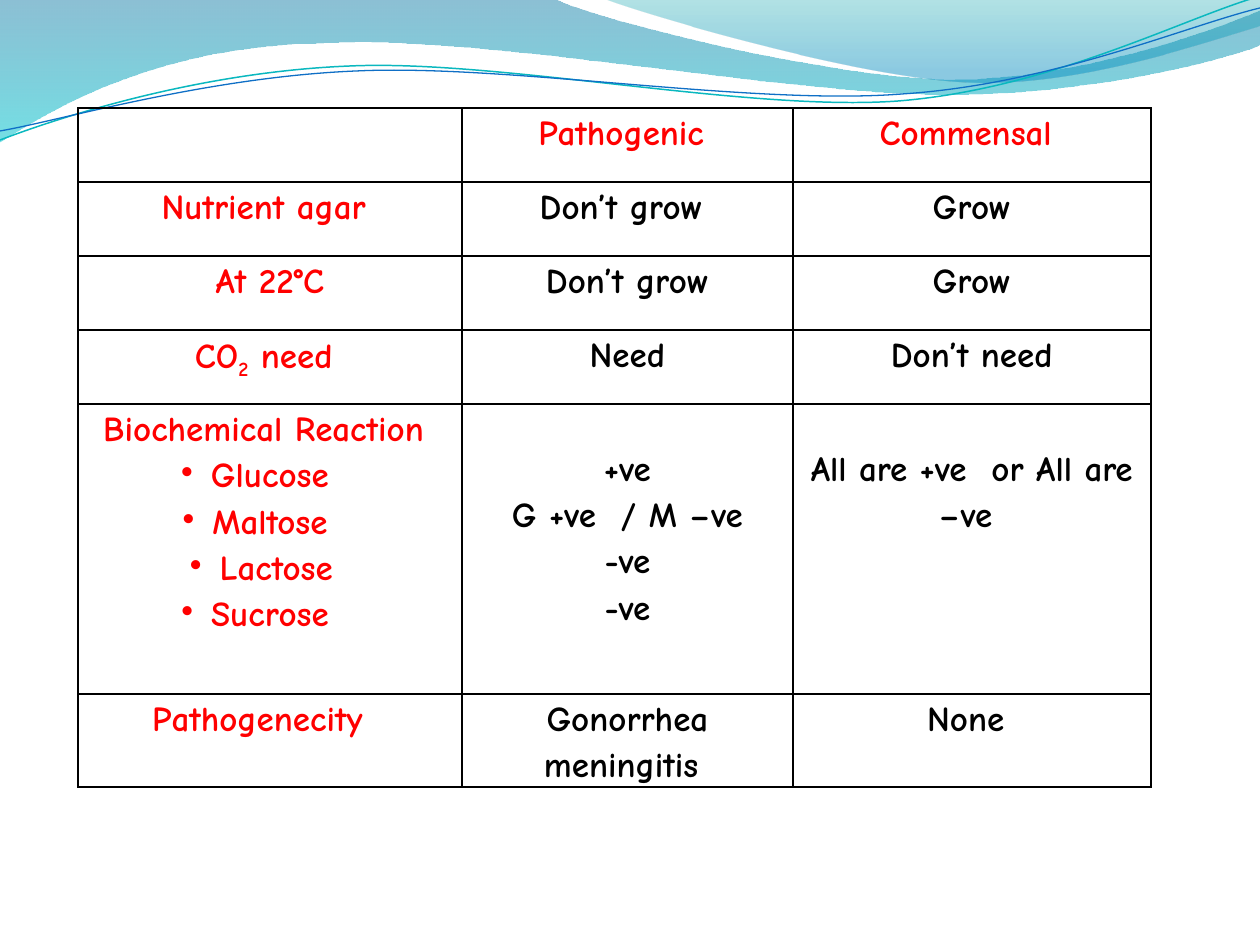
"""Build a slide with a comparison table of pathogenic and commensal species under a wave banner."""
from dataclasses import dataclass

from lxml.etree import SubElement
from pptx import Presentation
from pptx.dml.color import RGBColor
from pptx.enum.text import PP_ALIGN as Align
from pptx.oxml.ns import qn
from pptx.util import Emu, Pt

EMU_PER_PX = 914400 / 126


@dataclass(frozen=True)
class Theme:
    font: str = "Comic Neue"
    text_size: int = 20
    line_spacing: float = 1.15
    heading: str = "FF0000"
    body: str = "000000"
    border: str = "000000"
    border_width: int = 1
    teal_line: str = "0AB8BF"
    blue_line: str = "0F6FC6"
    wide_wave: tuple = ((0, "0074A1", 45), (1, "00C6CF", 55))
    small_wave: tuple = ((0, "00A1A9", 30), (0.8, "008BBF", 45))


WIDE_WAVE = [
    [(0, 0)], [(554, -1)],
    [(600, 21), (837, 79), (955, 79)], [(1075, 79), (1207, 33), (1260, 11)],
    [(1261, 45)],
    [(1239, 55), (1096, 96), (940, 94)], [(784, 94), (481, 35), (324, 43)],
    [(163, 45), (58, 105), (-1, 142)],
]
SMALL_WAVE = [
    [(604, -1)],
    [(641, 14), (859, 78), (969, 82)], [(1079, 87), (1211, 40), (1260, 26)],
    [(1260, 0)],
]
TEAL_LINE = [
    [(0, 140)],
    [(60, 117), (199, 72), (349, 66)], [(498, 59), (747, 112), (898, 101)],
    [(1049, 89), (1182, 19), (1257, -3)],
]
BLUE_LINE = [
    [(0, 131)],
    [(59, 121), (207, 77), (357, 71)], [(508, 64), (752, 106), (903, 94)],
    [(1053, 84), (1186, 26), (1260, 8)],
]

COLUMN_WIDTHS = [384, 331, 358]
ROW_HEIGHTS = [74, 74, 74, 74, 290, 93]
REACTION_ROW = 4
ROWS = [
    ["", "Pathogenic ", "Commensal "],
    ["Nutrient agar ", "Don’t grow ", "Grow"],
    ["At 22°C", "Don’t grow", "Grow"],
    ["CO|2| need ", "Need", "Don’t need"],
    ["Biochemical Reaction \n•Glucose \n•Maltose \n•Lactose\n•Sucrose ",
     "+ve\nG +ve  / M –ve\n-ve\n-ve", "All are +ve  or All are –ve "],
    ["Pathogenecity  ", "Gonorrhea meningitis ", "None "],
]


def px(length):
    return Emu(round(length * EMU_PER_PX))


class SlideBuilder:
    def __init__(self, slide, theme):
        self.slide = slide
        self.theme = theme

    def curve(self, segments, close=False):
        (start,), *rest = segments
        builder = self.slide.shapes.build_freeform(*start, scale=EMU_PER_PX)
        builder.add_line_segments([point for segment in rest for point in segment], close=close)
        shape = builder.convert_to_shape()
        shape.shadow.inherit = False
        steps = iter(shape._element.xpath(".//a:path/a:lnTo"))
        for segment in rest:
            group = [next(steps) for _ in segment]
            if len(group) == 3:
                bezier = group[0].makeelement(qn("a:cubicBezTo"))
                group[0].addprevious(bezier)
                for step in group:
                    bezier.append(step[0])
                    step.getparent().remove(step)
        return shape

    def wave(self, segments, stops):
        shape = self.curve(segments, close=True)
        shape.line.fill.background()
        shape.fill.gradient()
        shape.fill.gradient_angle = 270
        for stop, (position, color, _) in zip(shape.fill.gradient_stops, stops):
            stop.position = position
            stop.color.rgb = RGBColor.from_string(color)
        for color, (_, _, opacity) in zip(shape._element.xpath(".//a:gs/a:srgbClr"), stops):
            SubElement(color, qn("a:alpha"), val=str(opacity * 1000))

    def wave_line(self, segments, color, width):
        shape = self.curve(segments)
        shape.fill.background()
        shape.line.color.rgb = RGBColor.from_string(color)
        shape.line.width = Pt(width)

    def table(self, left, top, widths, heights, rows):
        frame = self.slide.shapes.add_table(
            len(rows), len(widths), px(left), px(top), px(sum(widths)), px(sum(heights)))
        table = frame.table
        table.first_row = table.horz_banding = False
        for column, width in zip(table.columns, widths):
            column.width = px(width)
        for row, height in zip(table.rows, heights):
            row.height = px(height)
        for row_index, texts in enumerate(rows):
            for column_index, text in enumerate(texts):
                is_heading = row_index == 0 or column_index == 0
                lowered = row_index == REACTION_ROW and column_index > 0
                cell = table.cell(row_index, column_index)
                self.cell(cell, text, is_heading, 40 if lowered else 0)

    def cell(self, cell, text, is_heading, top_margin):
        cell.fill.background()
        cell.margin_left = cell.margin_right = px(9)
        cell.margin_top, cell.margin_bottom = px(top_margin), 0
        self.borders(cell)
        frame = cell.text_frame
        for index, line in enumerate(text.split("\n")):
            paragraph = frame.add_paragraph() if index else frame.paragraphs[0]
            self.paragraph(paragraph, line, self.theme.heading if is_heading else self.theme.body)

    def borders(self, cell):
        properties = cell._tc.get_or_add_tcPr()
        for index, side in enumerate(("lnL", "lnR", "lnT", "lnB")):
            line = properties.makeelement(qn(f"a:{side}"), w=str(Pt(self.theme.border_width)))
            fill = SubElement(line, qn("a:solidFill"))
            SubElement(fill, qn("a:srgbClr"), val=self.theme.border)
            properties.insert(index, line)

    def paragraph(self, paragraph, text, color):
        paragraph.alignment = Align.CENTER
        paragraph.line_spacing = self.theme.line_spacing
        if text.startswith("•"):
            SubElement(paragraph._p.get_or_add_pPr(), qn("a:buChar"), char="•")
        font = paragraph.font
        font.name, font.size, font.bold = self.theme.font, Pt(self.theme.text_size), True
        font.color.rgb = RGBColor.from_string(color)
        for index, part in enumerate(text.removeprefix("•").split("|")):
            run = paragraph.add_run()
            run.text = part
            if index % 2:
                run.font._element.set("baseline", "-25000")


def main():
    presentation = Presentation()
    presentation.slide_width, presentation.slide_height = px(1260), px(945)
    theme = Theme()
    slide = presentation.slides.add_slide(presentation.slide_layouts[6])
    builder = SlideBuilder(slide, theme)
    builder.wave(WIDE_WAVE, theme.wide_wave)
    builder.wave(SMALL_WAVE, theme.small_wave)
    builder.wave_line(TEAL_LINE, theme.teal_line, 0.85)
    builder.wave_line(BLUE_LINE, theme.blue_line, 0.75)
    builder.table(78, 108, COLUMN_WIDTHS, ROW_HEIGHTS, ROWS)
    presentation.save("out.pptx")


if __name__ == "__main__":
    main()
